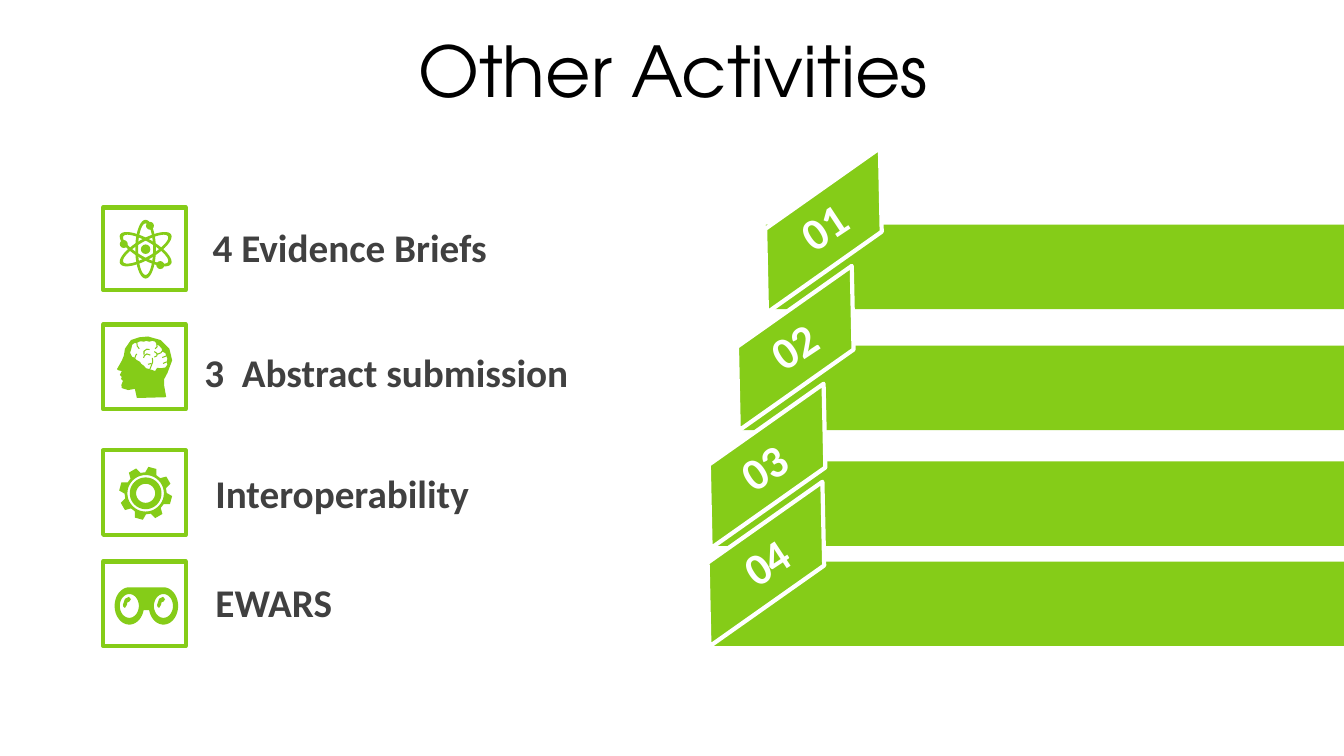
from math import cos, radians, sin

from pptx import Presentation
from pptx.dml.color import RGBColor
from pptx.enum.shapes import MSO_SHAPE as Preset
from pptx.enum.text import MSO_ANCHOR as Anchor, MSO_AUTO_SIZE as AutoSize, PP_ALIGN as Align
from pptx.util import Cm, Pt

COLORS = {name: RGBColor.from_string(value) for name, value in {
    "green": "85CC18", "white": "FFFFFF", "grey": "404040", "black": "000000"}.items()}
SLIDE_WIDTH, SLIDE_HEIGHT = 33.87, 19.05


def arc(cx, cy, rx, ry, turn=0, start=0, end=360, steps=40):
    tilt = radians(turn)
    points = []
    for step in range(steps + 1):
        angle = radians(start + (end - start) * step / steps)
        x, y = rx * cos(angle), ry * sin(angle)
        points.append((cx + x * cos(tilt) - y * sin(tilt), cy + x * sin(tilt) + y * cos(tilt)))
    return points


def paint(shape, fill, line, width):
    shape.shadow.inherit = False
    for part, color in ((shape.fill, fill), (shape.line.fill, line)):
        if color:
            part.solid()
            part.fore_color.rgb = COLORS[color]
        else:
            part.background()
    if line:
        shape.line.width = Pt(width)


deck = Presentation()
deck.slide_width, deck.slide_height = Cm(SLIDE_WIDTH), Cm(SLIDE_HEIGHT)
slide = deck.slides.add_slide(deck.slide_layouts[5])

heading = slide.shapes.title
for key, value in {"left": 0.89, "top": 0.94, "width": 32.16, "height": 2.01}.items():
    setattr(heading, key, Cm(value))
heading.text_frame.text = "Other Activities"
for key, value in {"auto_size": AutoSize.NONE, "word_wrap": True, "vertical_anchor": Anchor.MIDDLE,
                   "margin_left": Cm(0.25), "margin_right": Cm(0.25),
                   "margin_top": Cm(0.25), "margin_bottom": Cm(0.13)}.items():
    setattr(heading.text_frame, key, value)
heading_line = heading.text_frame.paragraphs[0]
for key, value in {"alignment": Align.CENTER, "line_spacing": 0.7, "space_before": Pt(10)}.items():
    setattr(heading_line, key, value)
for key, value in {"name": "TeX Gyre Adventor", "size": Pt(50), "bold": False}.items():
    setattr(heading_line.runs[0].font, key, value)
heading_line.runs[0].font.color.rgb = COLORS["black"]

bars = [(Preset.RECTANGLE, left, top, SLIDE_WIDTH - left, 2.13, 0, "green", None)
        for left, top in ((19.3, 5.66), (18.59, 8.71), (17.93, 11.63), (17.93, 14.15))]
tabs = [(Preset.PARALLELOGRAM, left, top, 4.72, 1.75, 144.8, "green", "white")
        for left, top in ((18.39, 4.93), (17.68, 7.9), (16.97, 10.87), (16.94, 13.34))]
frames = [(Preset.RECTANGLE, 2.6, top, 2.08, height, 0, "white", "green")
          for top, height in ((5.23, 2.08), (8.18, 2.13), (11.35, 2.13), (14.15, 2.13))]
ATOM_X, ATOM_Y = 3.67, 6.28
particles = [(Preset.OVAL, x - r, y - r, 2 * r, 2 * r, 0, "green", None)
             for x, y, r in ((ATOM_X, ATOM_Y, 0.12), (3.78, 5.69, 0.1), (3.12, 6.15, 0.1), (4.04, 6.68, 0.1))]

for preset, left, top, width, height, rotation, fill, line in (
        bars[:3] + tabs[2::-1] + bars[3:] + tabs[3:] + frames + particles):
    block = slide.shapes.add_shape(preset, Cm(left), Cm(top), Cm(width), Cm(height))
    block.rotation = rotation
    if preset == Preset.PARALLELOGRAM:
        block.adjustments[0] = 0.674
    paint(block, fill, line, 3)

orbits = [[arc(ATOM_X, ATOM_Y, 0.26, 0.74, turn), arc(ATOM_X, ATOM_Y, 0.19, 0.65, turn)]
          for turn in (0, 60, 120)]

GEAR_X, GEAR_Y = 3.67, 12.43
teeth = [(GEAR_X + r * cos(radians(tooth + offset)), GEAR_Y + r * sin(radians(tooth + offset)))
         for tooth in range(15, 375, 45)
         for offset, r in ((-16, 0.53), (-9, 0.67), (9, 0.67), (16, 0.53))]
gear = [teeth] + [arc(GEAR_X, GEAR_Y, r, r) for r in (0.46, 0.4, 0.24)]

LEFT_LENS, RIGHT_LENS, LENS_Y = 3.26, 4.12, 15.27
glint = [(3.15, 15.32), (3.2, 15.24), (3.21, 15.18), (3.26, 15.16), (3.3, 15.1),
         (3.25, 15.04), (3.15, 15.09), (3.1, 15.24), (3.11, 15.29)]
binoculars = [arc(LEFT_LENS, LENS_Y, 0.37, 0.47, start=-90, end=-347)
              + arc(RIGHT_LENS, LENS_Y, 0.37, 0.47, start=167, end=-90)]
for lens_x in (LEFT_LENS, RIGHT_LENS):
    binoculars.append(arc(lens_x, LENS_Y, 0.24, 0.3))
    binoculars.append([(x + lens_x - LEFT_LENS, y) for x, y in glint])

profile = [(3.73, 8.48), (4.05, 8.57), (4.27, 8.79), (4.34, 9.08), (4.22, 9.4), (4.14, 9.55),
           (4.14, 9.73), (4.19, 10.01), (3.45, 10.03), (3.4, 9.8), (3.23, 9.83), (3.07, 9.78),
           (3.06, 9.7), (3.1, 9.6), (3.05, 9.55), (3.07, 9.5), (3.02, 9.45), (3.07, 9.35),
           (2.98, 9.33), (2.95, 9.3), (3.07, 9.09), (3.12, 8.97), (3.15, 8.79), (3.3, 8.57),
           (3.51, 8.5)]
brain = [(3.68, 8.59), (3.63, 8.61), (3.53, 8.6), (3.45, 8.64), (3.38, 8.65), (3.33, 8.69),
         (3.31, 8.79), (3.28, 8.89), (3.33, 8.99), (3.4, 9.02), (3.44, 9.07), (3.53, 9.12),
         (3.56, 9.17), (3.63, 9.22), (3.68, 9.28), (3.76, 9.3), (3.91, 9.35), (3.96, 9.27),
         (4.06, 9.28), (4.17, 9.26), (4.22, 9.19), (4.2, 9.12), (4.22, 9.04), (4.19, 8.97),
         (4.17, 8.9), (4.09, 8.86), (4.08, 8.79), (4.01, 8.71), (3.96, 8.69), (3.91, 8.61),
         (3.84, 8.59), (3.76, 8.61)]
folds = [[(3.45, 8.64), (3.46, 8.72), (3.51, 8.79)],
         [(3.4, 9.02), (3.43, 8.94), (3.45, 8.92)],
         [(3.63, 8.94), (3.63, 8.85), (3.7, 8.8), (3.77, 8.81)],
         [(3.62, 9.02), (3.64, 8.96), (3.7, 8.92), (3.79, 8.95)],
         [(3.78, 9.3), (3.82, 9.2), (3.85, 9.12), (3.84, 9.02)],
         [(3.73, 9.18), (3.82, 9.16)],
         [(3.89, 9), (3.95, 8.97), (3.96, 8.91), (3.89, 8.86)],
         [(3.96, 8.93), (4.06, 8.89), (4.09, 8.84)],
         [(3.91, 8.79), (3.96, 8.74), (3.95, 8.66)],
         [(4.09, 9.01), (4.19, 8.97)],
         [(4.11, 9.16), (4.2, 9.12)]]

for contours in orbits + [[profile, brain], folds, gear, binoculars]:
    closed = contours is not folds
    outlines = [[(Cm(x), Cm(y)) for x, y in contour] for contour in contours]
    pen = slide.shapes.build_freeform(*outlines[0][0], scale=1.0)
    for index, outline in enumerate(outlines):
        if index:
            pen.move_to(*outline[0])
        pen.add_line_segments(outline[1:], close=closed)
    icon = pen.convert_to_shape()
    paint(icon, "green" if closed else None, None if closed else "green", 0.75)

activities = [(text, left, top, 11.38, 1.45, 0, 28, "grey", Align.LEFT) for text, left, top in (
    ("4 Evidence Briefs", 5.11, 5.51), ("3  Abstract submission", 4.9, 8.64),
    ("Interoperability", 5.18, 11.71), ("EWARS", 5.18, 14.45))]
numbers = [(f"{number:02}", left, top, 2.67, 1.63, 326.5, 32, "white", Align.CENTER)
           for number, (left, top) in enumerate(
               ((19.43, 4.88), (18.67, 7.9), (17.91, 10.95), (17.98, 13.34)), 1)]

for text, left, top, width, height, rotation, size, color, alignment in activities + numbers:
    label = slide.shapes.add_textbox(Cm(left), Cm(top), Cm(width), Cm(height))
    label.rotation = rotation
    label.text_frame.word_wrap = True
    label.text_frame.auto_size = AutoSize.SHAPE_TO_FIT_TEXT
    line = label.text_frame.paragraphs[0]
    line.alignment = alignment
    run = line.add_run()
    run.text = text
    for key, value in {"name": "Calibri", "size": Pt(size), "bold": True}.items():
        setattr(run.font, key, value)
    run.font.color.rgb = COLORS[color]

deck.save("out.pptx")
